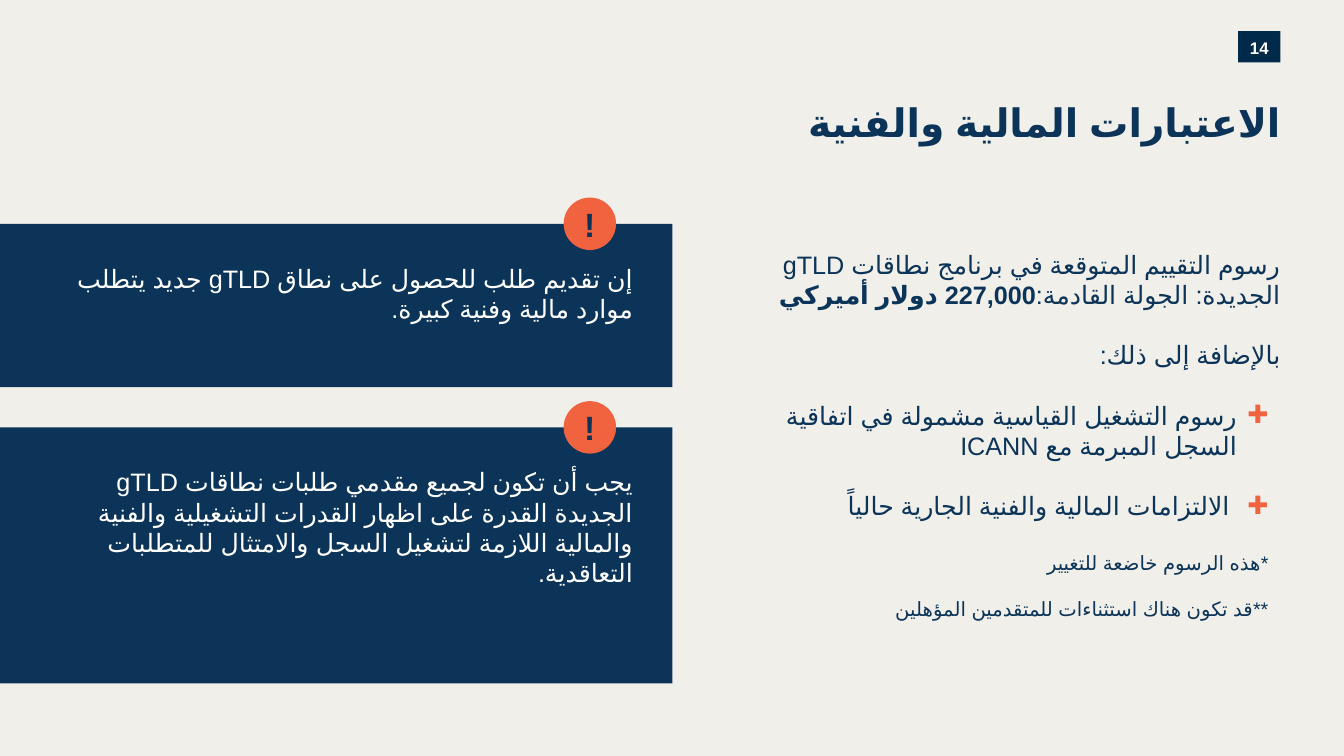
from lxml import etree
from pptx import Presentation
from pptx.dml.color import RGBColor
from pptx.enum import lang, shapes, text
from pptx.oxml import ns
from pptx.util import Inches, Pt

THEME = {
    "font": "Arial",
    "paper": "F1EFEA", "navy": "0B3458", "ink": "002A49",
    "orange": "F1633E", "white": "FFFFFF",
    "title": 28, "mark": 24, "body": 18, "note": 14, "number": 12,
}

PAGE_NUMBER = "14"
TITLE = "الاعتبارات المالية والفنية"

# (top, height, wording)
WARNINGS = [
    (2.22, 1.62, "إن تقديم طلب للحصول على نطاق gTLD جديد يتطلب موارد مالية وفنية كبيرة."),
    (4.24, 2.54, "يجب أن تكون لجميع مقدمي طلبات نطاقات gTLD الجديدة القدرة على اظهار "
                 "القدرات التشغيلية والفنية والمالية اللازمة لتشغيل السجل والامتثال "
                 "للمتطلبات التعاقدية."),
]
MARK = "!"

# (kind, plain wording, bold wording)
FEES = [
    ("plain", "رسوم التقييم المتوقعة في برنامج نطاقات gTLD الجديدة: الجولة القادمة:",
     "227,000 دولار أميركي"),
    ("plain", "بالإضافة إلى ذلك:", ""),
    ("bullet", "رسوم التشغيل القياسية مشمولة في اتفاقية السجل المبرمة مع ICANN", ""),
    ("wide bullet", "الالتزامات المالية والفنية الجارية حالياً", ""),
    ("note", "*هذه الرسوم خاضعة للتغيير", ""),
    ("last note", "**قد تكون هناك استثناءات للمتقدمين المؤهلين", ""),
]
# kind: (size, margin, indent, space before in points)
FEE_STYLES = {
    "plain": ("body", 0, 0, 21.5),
    "bullet": ("body", 0.43, -0.31, 21.5),
    "wide bullet": ("body", 0.5, -0.38, 21.5),
    "note": ("note", 0.12, 0, 21.5),
    "last note": ("note", 0.12, 0, 16.5),
}

PANEL_WIDTH = 6.67
MARK_LEFT, MARK_SIZE = 5.59, 0.52
NO_INSETS = (0, 0, 0, 0)
PANEL_INSETS = (0.67, 0.39, 0.39, 0.3)
MARK_INSETS = (0.1, 0.05, 0.1, 0.05)


def color(name):
    return RGBColor.from_string(THEME[name])


def set_frame(frame, insets, anchor=text.MSO_ANCHOR.TOP):
    frame.word_wrap = True
    frame.vertical_anchor = anchor
    (frame.margin_left, frame.margin_top,
     frame.margin_right, frame.margin_bottom) = map(Inches, insets)


def style_paragraph(paragraph, size, ink, bold=False, centered=False, rtl=True):
    paragraph.alignment = text.PP_ALIGN.CENTER if centered else text.PP_ALIGN.RIGHT
    if rtl:
        paragraph._p.get_or_add_pPr().set("rtl", "1")
    for run in paragraph.runs:
        run.font.name = THEME["font"]
        run.font.size = Pt(THEME[size])
        run.font.bold = bold
        run.font.color.rgb = color(ink)
        if rtl:
            run.font.language_id = lang.MSO_LANGUAGE_ID.ARABIC
            script = etree.SubElement(run._r.get_or_add_rPr(), ns.qn("a:cs"))
            script.set("typeface", THEME["font"])


def add_bullet(paragraph):
    properties = paragraph._p.get_or_add_pPr()
    tint = etree.SubElement(properties, ns.qn("a:buClr"))
    etree.SubElement(tint, ns.qn("a:srgbClr")).set("val", THEME["orange"])
    etree.SubElement(properties, ns.qn("a:buFont")).set("typeface", THEME["font"])
    etree.SubElement(properties, ns.qn("a:buChar")).set("char", "✚")


def add_filled(slide, kind, box, fill, wording, insets, anchor):
    """Add a plain filled shape and return its one paragraph."""
    shape = slide.shapes.add_shape(kind, *map(Inches, box))
    shape.shadow.inherit = False
    shape.fill.solid()
    shape.fill.fore_color.rgb = color(fill)
    shape.line.fill.background()
    set_frame(shape.text_frame, insets, anchor)
    shape.text_frame.text = wording
    return shape.text_frame.paragraphs[0]


def add_text_frame(slide, box):
    frame = slide.shapes.add_textbox(*map(Inches, box)).text_frame
    set_frame(frame, NO_INSETS)
    return frame


def add_fees(slide):
    frame = add_text_frame(slide, (7.59, 2.47, 5.11, 4.26))
    for index, (kind, wording, bold_wording) in enumerate(FEES):
        size, margin, indent, space = FEE_STYLES[kind]
        paragraph = frame.paragraphs[0] if index == 0 else frame.add_paragraph()
        paragraph.text = wording
        if bold_wording:
            paragraph.add_run().text = bold_wording
        properties = paragraph._p.get_or_add_pPr()
        properties.set("marL", str(Inches(margin)))
        properties.set("indent", str(Inches(indent)))
        if "bullet" in kind:
            add_bullet(paragraph)
        style_paragraph(paragraph, size, "navy")
        if bold_wording:
            paragraph.runs[-1].font.bold = True
        if index:
            paragraph.space_before = Pt(space)


def main():
    deck = Presentation()
    deck.slide_width, deck.slide_height = Inches(13.33), Inches(7.5)
    slide = deck.slides.add_slide(deck.slide_layouts[6])
    slide.background.fill.solid()
    slide.background.fill.fore_color.rgb = color("paper")

    rectangle, oval = shapes.MSO_SHAPE.RECTANGLE, shapes.MSO_SHAPE.OVAL
    top, middle = text.MSO_ANCHOR.TOP, text.MSO_ANCHOR.MIDDLE

    number = add_filled(slide, rectangle, (12.28, 0.31, 0.42, 0.31), "ink",
                        PAGE_NUMBER, NO_INSETS, middle)
    number.line_spacing = 1.08
    style_paragraph(number, "number", "white", bold=True, centered=True, rtl=False)

    title = add_text_frame(slide, (0.56, 0.98, 12.14, 1.09))
    title.text = TITLE
    style_paragraph(title.paragraphs[0], "title", "navy", bold=True)

    for panel_top, height, wording in WARNINGS:
        warning = add_filled(slide, rectangle, (0, panel_top, PANEL_WIDTH, height),
                             "navy", wording, PANEL_INSETS, top)
        style_paragraph(warning, "body", "white")
        mark_box = (MARK_LEFT, panel_top - MARK_SIZE / 2, MARK_SIZE, MARK_SIZE)
        mark = add_filled(slide, oval, mark_box, "orange", MARK, MARK_INSETS, middle)
        style_paragraph(mark, "mark", "navy", bold=True, centered=True)

    add_fees(slide)
    deck.save("out.pptx")


if __name__ == "__main__":
    main()
